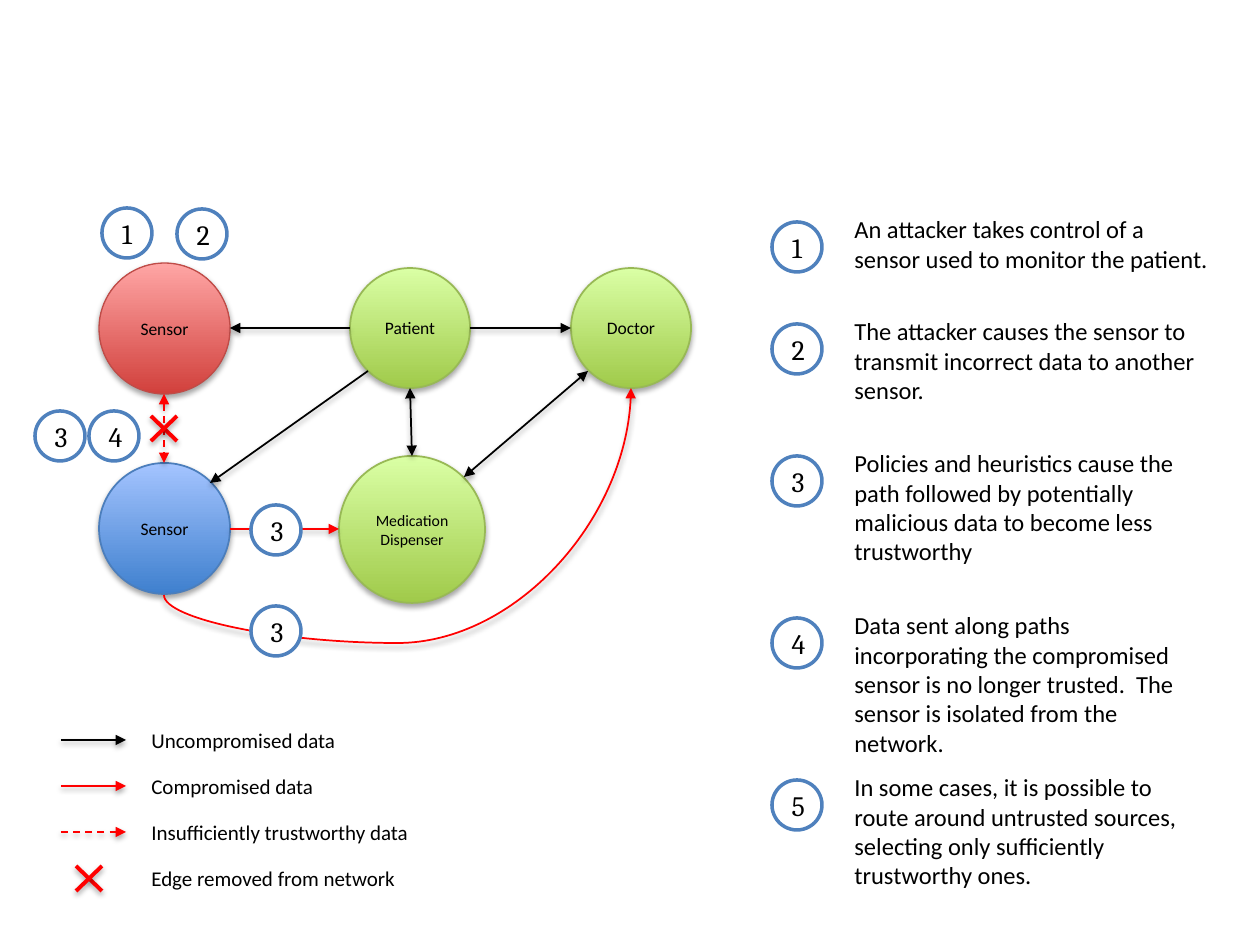
from lxml import etree
from pptx import Presentation
from pptx import util as u
from pptx.dml.color import RGBColor
from pptx.enum import dml, shapes, text
from pptx.oxml import parse_xml
from pptx.oxml.ns import nsdecls, qn

PX = 914400 / 126
SHADOW = (f'<a:effectLst {nsdecls("a")}><a:outerShdw blurRad="40000" dist="23000" dir="5400000" '
          'rotWithShape="0"><a:srgbClr val="000000"><a:alpha val="35000"/></a:srgbClr>'
          '</a:outerShdw></a:effectLst>')
BLACK, RED, WHITE, BLUE = "000000", "FF0000", "FFFFFF", "4F81BD"
GREEN_NODE = ("A0CA4A", "DAFFA5", "98B955", 1)
BLUE_NODE = ("3F80CE", "A4C4FF", "4B7EBC", 1)
RED_NODE = ("D1403C", "FFA6A5", "BF4C48", 0.75)


def px(*vals):
    return [u.Emu(round(v * PX)) for v in vals]


def rgb(value):
    return RGBColor.from_string(value)


prs = Presentation()
prs.slide_width, prs.slide_height = px(1260, 945)
s = prs.slides.add_slide(prs.slide_layouts[6])

steps = [
    (2, "An attacker takes control of a sensor used to monitor the patient."),
    (3, "The attacker causes the sensor to transmit incorrect data to another sensor."),
    (4, "Policies and heuristics cause the path followed by potentially malicious data "
        "to become less trustworthy"),
    (4, "Data sent along paths incorporating the compromised sensor is no longer trusted.  "
        "The sensor is isolated from the network."),
    (4, "In some cases, it is possible to route around untrusted sources, selecting only "
        "sufficiently trustworthy ones."),
]
legend = ["Uncompromised data", "Compromised data", "Insufficiently trustworthy data",
          "Edge removed from network"]

dots = [("1", 102, 208), ("2", 177, 209), ("3", 251, 606), ("3", 251, 505),
        ("4", 89, 411), ("3", 35, 411)]
labels = []
y = 208
for i, (rows, words) in enumerate(steps, 1):
    h = 12 + 30 * rows
    dots.append((str(i), 772, y + 14))
    labels.append((words, 842, y, h, 14))
    y += h + 30
for i, words in enumerate(legend):
    labels.append((words, 139, 721 + 46 * i, 38, 12))

nodes = [
    ("Sensor", 99, 463, 131, 131, 10, BLUE_NODE),
    ("Medication Dispenser", 339, 456, 146, 147, 9, GREEN_NODE),
    ("Patient", 350, 268, 120, 120, 10, GREEN_NODE),
    ("Sensor", 99, 263, 131, 131, 10, RED_NODE),
    ("Doctor", 571, 268, 120, 120, 10, GREEN_NODE),
]
for name, x, y, w, h, size, (low, high, edge, width) in nodes:
    sp = s.shapes.add_shape(shapes.MSO_SHAPE.OVAL, *px(x, y, w, h))
    sp.fill.gradient()
    sp.fill.gradient_angle = 90
    for stop, color, pos in zip(sp.fill.gradient_stops, (low, high), (0, 1)):
        stop.color.rgb = rgb(color)
        stop.position = pos
    sp.line.color.rgb = rgb(edge)
    sp.line.width = u.Pt(width)
    sp._element.spPr.append(parse_xml(SHADOW))
    tf = sp.text_frame
    tf.word_wrap = True
    tf.vertical_anchor = text.MSO_ANCHOR.MIDDLE
    p = tf.paragraphs[0]
    p.text = name
    p.alignment = text.PP_ALIGN.CENTER
    p.font.name, p.font.size = "Calibri", u.Pt(size)
    p.font.color.rgb = rgb(BLACK)

lines = [
    (210, 483, 368, 371, BLACK, 1, "head", False),
    (230, 529, 339, 529, RED, 1, "tail", False),
    (470, 328, 571, 328, BLACK, 1, "tail", False),
    (410, 388, 412, 456, BLACK, 1, "head tail", False),
    (230, 328, 350, 328, BLACK, 1, "head", False),
    (464, 477, 588, 371, BLACK, 1, "head tail", False),
    (164, 394, 164, 463, RED, 1, "head tail", True),
    (164, 595, 631, 388, RED, 1, "tail", False),
]
for i, color in enumerate((BLACK, RED, RED)):
    y = 740 + 46 * i
    lines.append((61, y, 126, y, color, 1, "tail", i == 2))
for x, y in ((151, 416), (76, 866)):
    lines.append((x, y, x + 26, y + 25, RED, 2.25, "", False))
    lines.append((x, y + 25, x + 26, y, RED, 2.25, "", False))

for x1, y1, x2, y2, color, width, ends, dashed in lines:
    curved = (x1, y1) == (164, 595)
    kind = shapes.MSO_CONNECTOR.CURVE if curved else shapes.MSO_CONNECTOR.STRAIGHT
    c = s.shapes.add_connector(kind, *px(x1, y1, x2, y2))
    c.line.color.rgb = rgb(color)
    c.line.width = u.Pt(width)
    if dashed:
        c.line.dash_style = dml.MSO_LINE.DASH
    ln = c.line._get_or_add_ln()
    for end in ends.split():
        etree.SubElement(ln, qn(f"a:{end}End"), type="triangle")
    spPr = c._element.spPr
    spPr.append(parse_xml(SHADOW))
    if curved:
        w, h = y1 - y2, x2 - x1
        c.left, c.top, c.width, c.height = px((x1 + x2 - w) / 2, (y1 + y2 - h) / 2, w, h)
        xfrm = spPr.find(qn("a:xfrm"))
        for key, value in (("rot", "5400000"), ("flipH", "1"), ("flipV", "1")):
            xfrm.set(key, value)
        geom = spPr.find(qn("a:prstGeom"))
        av = geom.find(qn("a:avLst"))
        etree.SubElement(av, qn("a:gd"), name="adj1", fmla="val -23200")

for digit, x, y in dots:
    sp = s.shapes.add_shape(shapes.MSO_SHAPE.OVAL, *px(x, y, 50, 50))
    sp.shadow.inherit = False
    sp.fill.solid()
    sp.fill.fore_color.rgb = rgb(WHITE)
    sp.line.color.rgb = rgb(BLUE)
    sp.line.width = u.Pt(2)
    tf = sp.text_frame
    tf.vertical_anchor = text.MSO_ANCHOR.MIDDLE
    p = tf.paragraphs[0]
    p.text = digit
    p.alignment = text.PP_ALIGN.CENTER
    p.font.name, p.font.size = "Cambria", u.Pt(16)
    p.font.color.rgb = rgb(BLACK)

for words, x, y, h, size in labels:
    tf = s.shapes.add_textbox(*px(x, y, 380, h)).text_frame
    tf.word_wrap = True
    p = tf.paragraphs[0]
    p.text = words
    p.font.name, p.font.size = "Calibri", u.Pt(size)
    p.font.color.rgb = rgb(BLACK)

prs.save("out.pptx")
